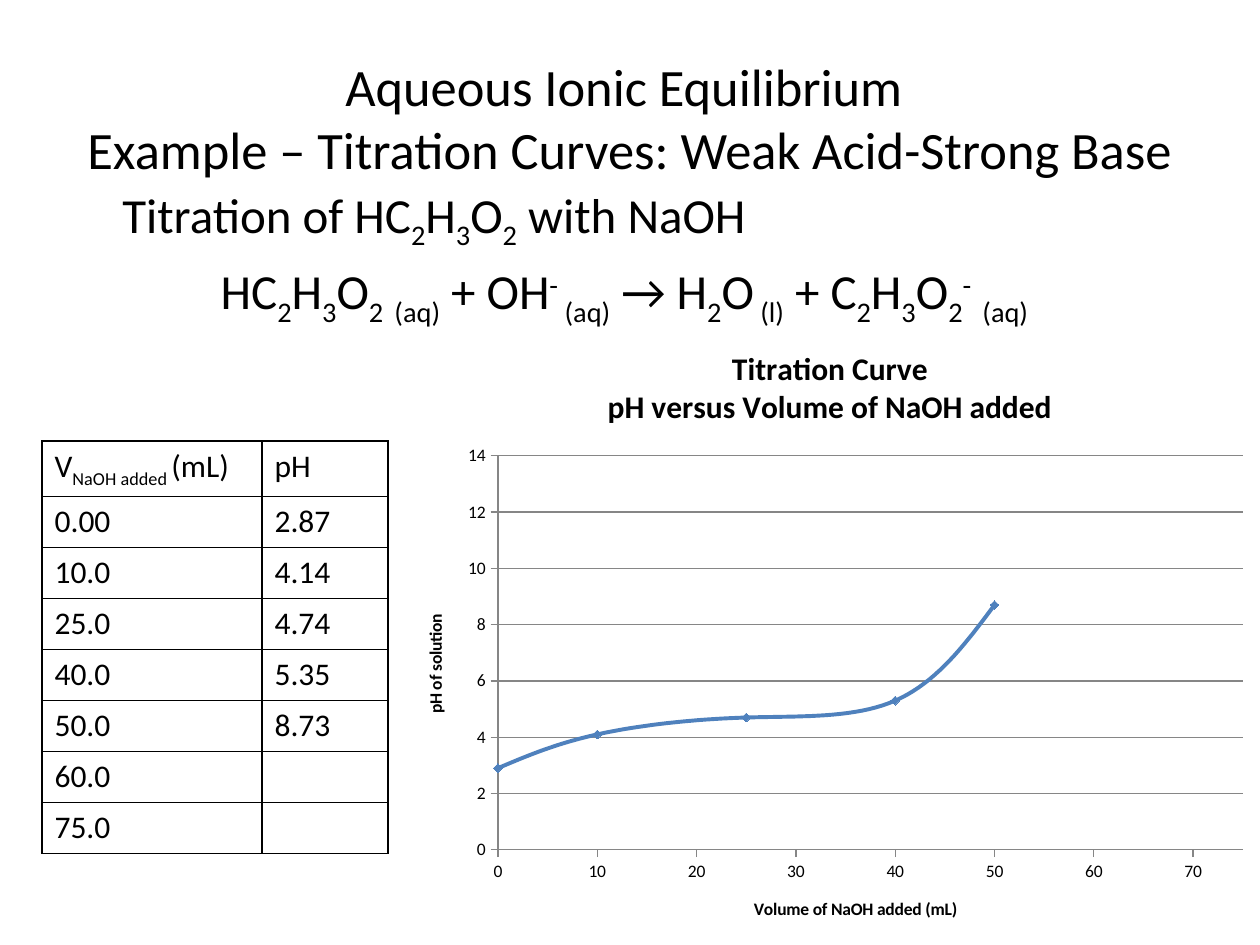
from dataclasses import dataclass

from lxml.etree import SubElement
from pptx import Presentation
from pptx.chart.data import XyChartData
from pptx.dml.color import RGBColor
from pptx.enum.chart import XL_CHART_TYPE, XL_MARKER_STYLE, XL_TICK_MARK
from pptx.enum.text import MSO_ANCHOR, PP_ALIGN
from pptx.oxml.ns import qn
from pptx.util import Pt

PX = 914400 // 126


@dataclass(frozen=True)
class Theme:
    font: str = "Calibri"
    text: RGBColor = RGBColor(0, 0, 0)
    border: str = "000000"
    curve: RGBColor = RGBColor(0x4F, 0x81, 0xBD)
    grid: RGBColor = RGBColor(0x86, 0x86, 0x86)
    title: int = 30
    body: int = 28
    table: int = 18
    chart_title: int = 18
    axis: int = 10


THEME = Theme()

# In formulas "|" separates runs; a leading "_" lowers a run, "^" raises it
BASELINES = {"_": "-25000", "^": "30000"}
REACTANTS = "Titration of HC|_2|H|_3|O|_2| with NaOH"
EQUATION = ("HC|_2|H|_3|O|_2| |_(aq)| + OH|^-|_ (aq)| → H|_2|O|_ (l)"
            "| + C|_2|H|_3|O|_2|^-| |_(aq)| ")
HEADINGS = ("V|_NaOH added |(mL)", "pH")
VOLUMES = ("0.00", "10.0", "25.0", "40.0", "50.0", "60.0", "75.0")
PH_VALUES = ("2.87", "4.14", "4.74", "5.35", "8.73", "", "")


def px(*lengths):
    return [length * PX for length in lengths]


def style_font(font, size, bold=False):
    font.name = THEME.font
    font.size = Pt(size)
    font.bold = bold
    font.color.rgb = THEME.text


def write_formula(paragraph, formula, size):
    style_font(paragraph.font, size)
    for part in formula.split("|"):
        baseline = BASELINES.get(part[:1])
        run = paragraph.add_run()
        run.text = part[1:] if baseline else part
        if baseline:
            run.font._element.set("baseline", baseline)


def add_text_frame(slide, box, anchor):
    frame = slide.shapes.add_textbox(*px(*box)).text_frame
    frame.word_wrap = True
    frame.vertical_anchor = anchor
    return frame


def add_title(slide, text, box):
    paragraph = add_text_frame(slide, box, MSO_ANCHOR.MIDDLE).paragraphs[0]
    paragraph.text = text
    paragraph.alignment = PP_ALIGN.CENTER
    style_font(paragraph.font, THEME.title)


def add_reaction(slide, box):
    frame = add_text_frame(slide, box, MSO_ANCHOR.TOP)
    heading, equation = frame.paragraphs[0], frame.add_paragraph()
    heading.alignment = PP_ALIGN.LEFT
    heading._p.get_or_add_pPr().set("marL", str(47 * PX))
    equation.alignment = PP_ALIGN.CENTER
    for paragraph, formula in ((heading, REACTANTS), (equation, EQUATION)):
        paragraph.space_before = Pt(5.6)
        write_formula(paragraph, formula, THEME.body)


def set_borders(cell):
    properties = cell._tc.get_or_add_tcPr()
    for side in ("lnL", "lnR", "lnT", "lnB"):
        line = SubElement(properties, qn(f"a:{side}"), w=str(Pt(1)))
        fill = SubElement(line, qn("a:solidFill"))
        SubElement(fill, qn("a:srgbClr"), val=THEME.border)


def add_data_table(slide, rows, box, column_widths):
    table = slide.shapes.add_table(
        len(rows), len(column_widths), *px(*box)).table
    table.first_row = table.horz_banding = False
    for column, width in zip(table.columns, px(*column_widths)):
        column.width = width
    for row_index, row in enumerate(rows):
        for column_index, text in enumerate(row):
            cell = table.cell(row_index, column_index)
            set_borders(cell)
            cell.fill.background()
            paragraph = cell.text_frame.paragraphs[0]
            if text:
                write_formula(paragraph, text, THEME.table)
            else:
                style_font(paragraph.font, THEME.table)


def set_chart_text(owner, lines, size):
    frame = owner.text_frame
    for index, text in enumerate(lines):
        paragraph = frame.add_paragraph() if index else frame.paragraphs[0]
        paragraph.text = text
        style_font(paragraph.font, size, bold=True)


def style_axis(axis, title, maximum, step):
    axis.minimum_scale, axis.maximum_scale = 0, maximum
    axis.major_unit = step
    axis.major_tick_mark = XL_TICK_MARK.OUTSIDE
    axis.minor_tick_mark = XL_TICK_MARK.NONE
    axis.format.line.color.rgb = THEME.grid
    axis.tick_labels.number_format = "General"
    axis.tick_labels.number_format_is_linked = False
    set_chart_text(axis.axis_title, [title], THEME.axis)


def place_plot(chart, chart_box, plot_box):
    left, top, width, height = chart_box
    plot_left, plot_top, plot_width, plot_height = plot_box
    plot_area = chart._chartSpace.find(".//" + qn("c:plotArea"))
    for old_layout in plot_area.findall(qn("c:layout")):
        plot_area.remove(old_layout)
    layout = SubElement(plot_area, qn("c:layout"))
    plot_area.insert(0, layout)
    manual = SubElement(layout, qn("c:manualLayout"))
    settings = {"layoutTarget": "inner", "xMode": "edge", "yMode": "edge",
                "x": (plot_left - left) / width,
                "y": (plot_top - top) / height,
                "w": plot_width / width, "h": plot_height / height}
    for name, value in settings.items():
        SubElement(manual, qn(f"c:{name}"), val=str(value))


def style_curve(series):
    smooth = series._element.find(qn("c:smooth"))
    if smooth is None:
        smooth = SubElement(series._element, qn("c:smooth"))
    smooth.set("val", "1")
    series.format.line.color.rgb = THEME.curve
    series.format.line.width = Pt(2.25)
    series.marker.style = XL_MARKER_STYLE.DIAMOND
    series.marker.size = 5
    series.marker.format.fill.solid()
    series.marker.format.fill.fore_color.rgb = THEME.curve
    series.marker.format.line.color.rgb = THEME.curve


def add_titration_chart(slide, box, plot_box):
    data = XyChartData()
    points = data.add_series("Series 1")
    for volume, acidity in zip(VOLUMES, PH_VALUES):
        if acidity:
            points.add_data_point(float(volume), round(float(acidity), 1))
    chart = slide.shapes.add_chart(
        XL_CHART_TYPE.XY_SCATTER_SMOOTH, *px(*box), data).chart
    style_font(chart.font, THEME.axis)
    chart.has_legend = False
    set_chart_text(chart.chart_title,
                   ["Titration Curve", "pH versus Volume of NaOH added"],
                   THEME.chart_title)
    chart.chart_title.include_in_layout = False

    # Axes and grid
    style_axis(chart.category_axis, "Volume of NaOH added (mL)", 75, 10)
    style_axis(chart.value_axis, "pH of solution", 14, 2)
    chart.category_axis.has_major_gridlines = False
    chart.value_axis.has_major_gridlines = True
    chart.value_axis.major_gridlines.format.line.color.rgb = THEME.grid
    place_plot(chart, box, plot_box)

    # Curve
    chart.plots[0].vary_by_categories = False
    style_curve(chart.plots[0].series[0])


def main():
    presentation = Presentation()
    presentation.slide_width, presentation.slide_height = px(1260, 945)
    slide = presentation.slides.add_slide(presentation.slide_layouts[6])

    add_title(slide, "Aqueous Ionic Equilibrium \v"
              "Example – Titration Curves: Weak Acid-Strong Base",
              (63, 38, 1134, 157))
    add_reaction(slide, (63, 178, 1134, 624))
    add_data_table(slide, [HEADINGS, *zip(VOLUMES, PH_VALUES)],
                   (42, 441, 346, 408), (220, 126))
    add_titration_chart(slide, (400, 325, 860, 620), (498, 456, 745, 394))

    presentation.save("out.pptx")


if __name__ == "__main__":
    main()
